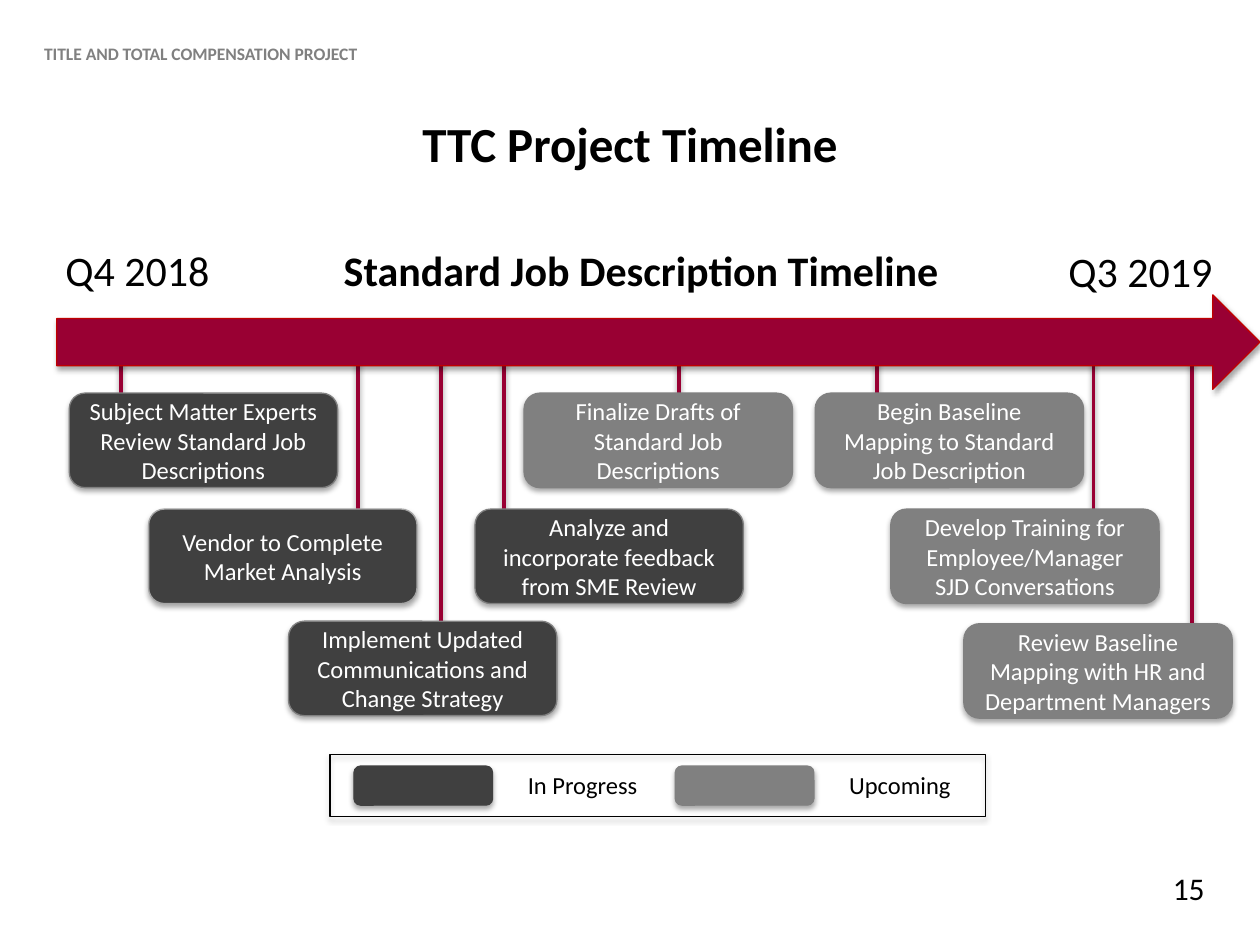
from pptx import Presentation
from pptx.dml.color import RGBColor
from pptx.enum.shapes import MSO_CONNECTOR, MSO_SHAPE
from pptx.enum.text import MSO_ANCHOR, PP_ALIGN
from pptx.util import Inches, Pt

CRIMSON, DARK, GRAY = "990033", "404040", "808080"
ARROW_MIDDLE = 2.72
BOX_WIDTH, BOX_HEIGHT = 2.13, 0.75


def add_block(kind, left, top, width, height, fill, line):
    """Add a filled, outlined shape that keeps the theme's soft shadow."""
    shape = slide.shapes.add_shape(
        kind, Inches(left), Inches(top), Inches(width), Inches(height))
    shape.fill.solid()
    shape.fill.fore_color.rgb = RGBColor.from_string(fill)
    shape.line.color.rgb = RGBColor.from_string(line)
    shape.line.width = Pt(0.75)
    return shape


def write(shape, text, size, color="000000", bold=False, align=PP_ALIGN.LEFT):
    shape.text_frame.text = text
    paragraph = shape.text_frame.paragraphs[0]
    paragraph.alignment = align
    paragraph.font.name = "Calibri"
    paragraph.font.size = Pt(size)
    paragraph.font.bold = bold
    paragraph.font.color.rgb = RGBColor.from_string(color)


presentation = Presentation()
presentation.slide_width = Inches(10)
presentation.slide_height = Inches(7.5)
slide = presentation.slides.add_slide(presentation.slide_layouts[5])

# Title and running header
title = slide.shapes.title
title.left, title.top = Inches(0), Inches(0)
title.width, title.height = Inches(10), Inches(1.5)
title_frame = title.text_frame
title_frame.vertical_anchor = MSO_ANCHOR.TOP
title_frame.margin_left = title_frame.margin_right = Inches(0.3)
title_frame.margin_top = Inches(0.9)
write(title, "TTC Project Timeline", 28, bold=True, align=PP_ALIGN.CENTER)

header = slide.shapes.add_textbox(Inches(0), Inches(0.24), Inches(10), Inches(0.37))
header.text_frame.word_wrap = True
header.text_frame.vertical_anchor = MSO_ANCHOR.MIDDLE
header.text_frame.margin_left = Inches(0.35)
write(header, "TITLE AND TOTAL COMPENSATION PROJECT", 10, GRAY, bold=True)

# Milestones: text, box left, box top, connector x, status colour, outline
milestones = [
    ("Subject Matter Experts Review Standard Job Descriptions", 0.55, 3.12, 0.96, DARK, GRAY),
    ("Vendor to Complete Market Analysis", 1.18, 4.04, 2.84, DARK, "A6A6A6"),
    ("Implement Updated Communications and Change Strategy", 2.29, 4.93, 3.5, DARK, GRAY),
    ("Analyze and incorporate feedback from SME Review", 3.77, 4.04, 4, DARK, GRAY),
    ("Finalize Drafts of Standard Job Descriptions", 4.16, 3.12, 5.39, GRAY, GRAY),
    ("Begin Baseline Mapping to Standard Job Description", 6.47, 3.12, 6.96, GRAY, GRAY),
    ("Develop Training for Employee/Manager SJD Conversations", 7.07, 4.04, 8.68, GRAY, GRAY),
    ("Review Baseline Mapping with HR and Department Managers", 7.65, 4.95, 9.46, GRAY, GRAY),
]

# Connectors run behind the arrow and the boxes
for text, left, top, x, fill, outline in milestones:
    connector = slide.shapes.add_connector(
        MSO_CONNECTOR.STRAIGHT, Inches(x), Inches(ARROW_MIDDLE),
        Inches(x), Inches(top + 0.2))
    connector.line.color.rgb = RGBColor.from_string(CRIMSON)
    connector.line.width = Pt(2)

add_block(MSO_SHAPE.RIGHT_ARROW, 0.45, 2.34, 9.55, 0.75, CRIMSON, "C00000")

for text, left, top, x, fill, outline in milestones:
    box = add_block(MSO_SHAPE.FLOWCHART_ALTERNATE_PROCESS,
                    left, top, BOX_WIDTH, BOX_HEIGHT, fill, outline)
    box.text_frame.word_wrap = True
    box.text_frame.vertical_anchor = MSO_ANCHOR.MIDDLE
    write(box, text, 14, "FFFFFF", align=PP_ALIGN.CENTER)

# Legend
legend = add_block(MSO_SHAPE.RECTANGLE, 2.62, 5.99, 5.2, 0.49, "FFFFFF", "000000")
legend.fill.background()
for left, color in [(2.81, DARK), (5.36, GRAY)]:
    add_block(MSO_SHAPE.ROUNDED_RECTANGLE, left, 6.08, 1.1, 0.31, color, color)

# Free labels: text, left, top, width, height, size, bold
labels = [
    ("Standard Job Description Timeline", 2.63, 1.89, 4.97, 0.5, 24, True),
    ("Q4 2018", 0.42, 1.89, 1.35, 0.5, 24, False),
    ("Q3 2019", 8.38, 1.9, 1.35, 0.5, 24, False),
    ("In Progress", 4.09, 6.06, 1.08, 0.34, 14, False),
    ("Upcoming", 6.64, 6.06, 1.01, 0.34, 14, False),
    ("15", 9.21, 6.85, 0.46, 0.4, 18, False),
]
for text, left, top, width, height, size, bold in labels:
    label = slide.shapes.add_textbox(
        Inches(left), Inches(top), Inches(width), Inches(height))
    label.text_frame.word_wrap = False
    write(label, text, size, bold=bold)

presentation.save("out.pptx")
